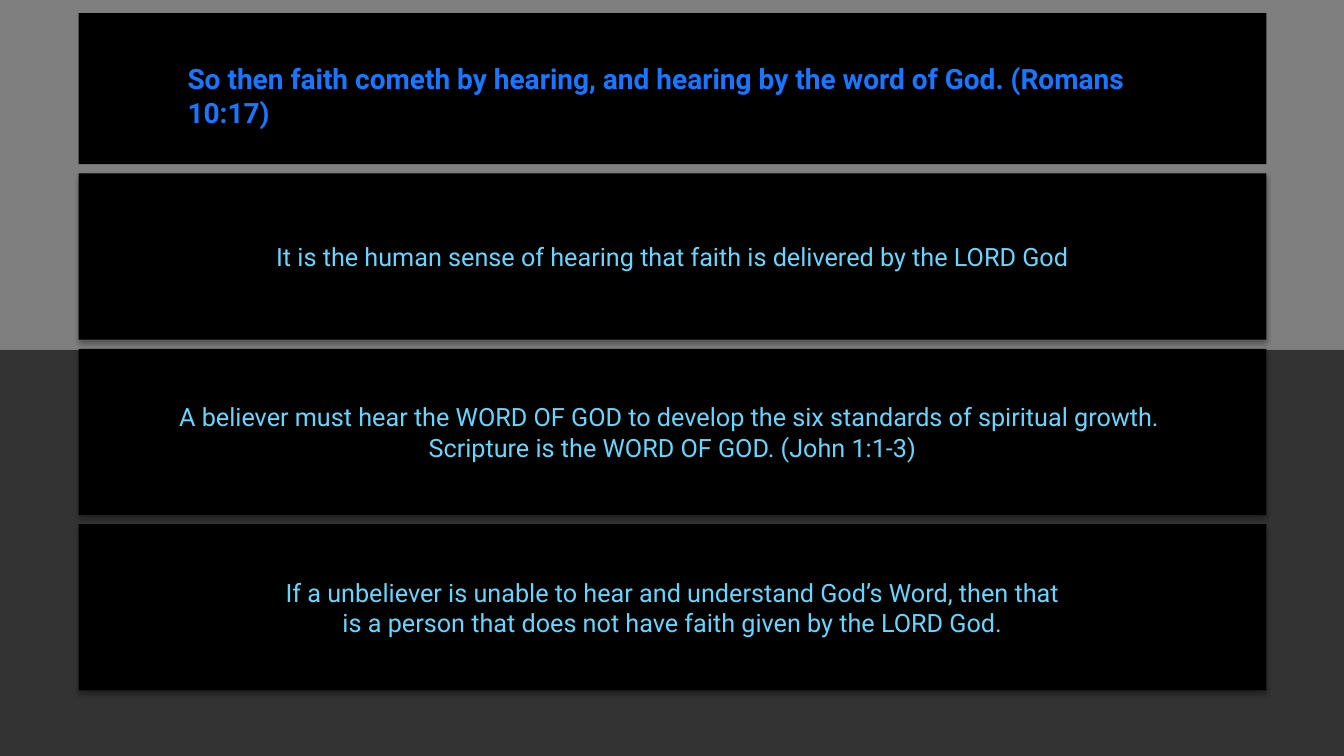
import pptx
import pptx.dml.color
import pptx.enum.shapes
import pptx.enum.text
import pptx.oxml
import pptx.oxml.ns
import pptx.util
from pptx.util import Inches

RGBColor = pptx.dml.color.RGBColor
BLACK = RGBColor(0x00, 0x00, 0x00)
VERSE_BLUE = RGBColor(0x19, 0x77, 0xFF)
POINT_BLUE = RGBColor(0x66, 0xD6, 0xFF)

SLIDE_WIDTH, SLIDE_HEIGHT = 13.33, 7.5
HORIZON = 3.47
PANEL_LEFT, PANEL_WIDTH = 0.78, 11.78
POINT_TOP, POINT_HEIGHT, POINT_PITCH = 1.72, 1.65, 1.74

POINTS = [
    ["It is the human sense of hearing that faith is delivered by the LORD God"],
    ["A believer must hear the WORD OF GOD to develop the six standards of spiritual growth. ",
     "Scripture is the WORD OF GOD. (John 1:1-3)"],
    ["If a unbeliever is unable to hear and understand God’s Word, then that",
     "is a person that does not have faith given by the LORD God."],
]

SHADOW_XML = (
    '<a:outerShdw %s blurRad="44450" dist="27940" dir="5400000" algn="ctr" rotWithShape="0">'
    '<a:srgbClr val="000000"><a:alpha val="32000"/></a:srgbClr></a:outerShdw>'
    % pptx.oxml.ns.nsdecls("a")
)


class VerseSlide:
    font_name = "Roboto"

    def __init__(self, deck):
        self.slide = deck.slides.add_slide(deck.slide_layouts[5])

    def panel(self, left, top, width, height, opacity=100):
        panel = self.slide.shapes.add_shape(
            pptx.enum.shapes.MSO_SHAPE.RECTANGLE,
            Inches(left), Inches(top), Inches(width), Inches(height))
        panel.shadow.inherit = False
        panel.fill.solid()
        panel.fill.fore_color.rgb = BLACK
        panel.line.fill.background()
        if opacity < 100:
            color = panel._element.spPr.find(".//" + pptx.oxml.ns.qn("a:srgbClr"))
            color.append(pptx.oxml.parse_xml(
                '<a:alpha %s val="%d"/>' % (pptx.oxml.ns.nsdecls("a"), opacity * 1000)))
        return panel

    def add_lines(self, frame, lines, size, color, align, bold=False):
        frame.word_wrap = True
        for index, line in enumerate(lines):
            paragraph = frame.add_paragraph() if index else frame.paragraphs[0]
            paragraph.alignment = align
            run = paragraph.add_run()
            run.text = line
            run.font.name = self.font_name
            run.font.size = pptx.util.Pt(size)
            run.font.bold = bold
            run.font.color.rgb = color

    def verse(self, text, left, top, width, height):
        """Place the title in front of the panels drawn so far."""
        verse = self.slide.shapes.title
        verse.left, verse.top = Inches(left), Inches(top)
        verse.width, verse.height = Inches(width), Inches(height)
        self.slide.shapes._spTree.append(verse._element)
        frame = verse.text_frame
        frame.auto_size = pptx.enum.text.MSO_AUTO_SIZE.NONE
        frame.vertical_anchor = pptx.enum.text.MSO_ANCHOR.TOP
        self.add_lines(frame, [text], 20, VERSE_BLUE, pptx.enum.text.PP_ALIGN.LEFT, bold=True)

    def point(self, lines, top):
        point = self.panel(PANEL_LEFT, top, PANEL_WIDTH, POINT_HEIGHT)
        effects = point._element.spPr.find(pptx.oxml.ns.qn("a:effectLst"))
        effects.append(pptx.oxml.parse_xml(SHADOW_XML))
        point.text_frame.vertical_anchor = pptx.enum.text.MSO_ANCHOR.MIDDLE
        self.add_lines(point.text_frame, lines, 18, POINT_BLUE, pptx.enum.text.PP_ALIGN.CENTER)


def main():
    deck = pptx.Presentation()
    deck.slide_width, deck.slide_height = Inches(SLIDE_WIDTH), Inches(SLIDE_HEIGHT)
    page = VerseSlide(deck)
    page.panel(0, 0, SLIDE_WIDTH, HORIZON, opacity=50)
    page.panel(0, HORIZON, SLIDE_WIDTH, SLIDE_HEIGHT - HORIZON, opacity=80)
    page.panel(PANEL_LEFT, 0.13, PANEL_WIDTH, 1.5)
    page.verse("So then faith cometh by hearing, and hearing by the word of God. (Romans 10:17)",
               1.76, 0.56, 9.81, 0.44)
    for row, lines in enumerate(POINTS):
        page.point(lines, POINT_TOP + row * POINT_PITCH)
    deck.save("out.pptx")


if __name__ == "__main__":
    main()
